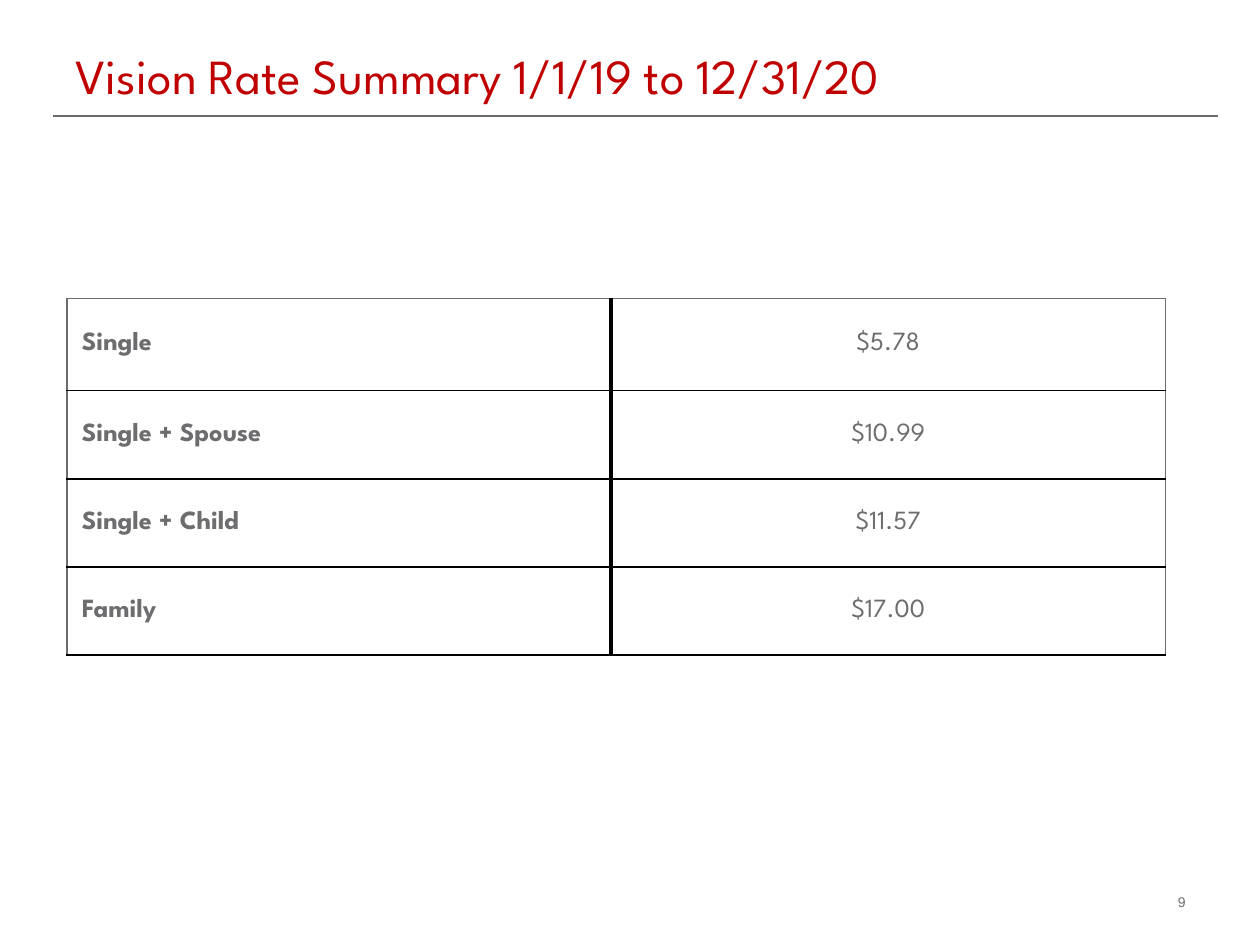
from pptx import Presentation
from pptx.dml.color import RGBColor
from pptx.enum.shapes import MSO_CONNECTOR as Link
from pptx.enum.text import MSO_ANCHOR as Anchor, PP_ALIGN as Align
from pptx.oxml.ns import qn
from pptx.util import Inches, Pt
from lxml.etree import SubElement

# Content
TITLE = "Vision Rate Summary 1/1/19 to 12/31/20"
RATES = [
    ("Single", "$5.78"),
    ("Single + Spouse", "$10.99"),
    ("Single + Child", "$11.57"),
    ("Family", "$17.00"),
]
PAGE = "9"

# Style
FONT = "League Spartan"
RED, GRAY, RULE, BLACK = "C00000", "6D6D70", "6B6B6E", "000000"
WIDTHS = [4.32, 4.4]
HEIGHTS = [0.73, 0.7, 0.7, 0.7]


def color(code):
    return RGBColor.from_string(code)


def style(para, size, code, name=FONT, bold=False):
    for run in para.runs:
        font = run.font
        font.size, font.name, font.bold = Pt(size), name, bold
        font.color.rgb = color(code)


def border(cell, sides):
    props = cell._tc.get_or_add_tcPr()
    for spot, (side, (code, width)) in enumerate(sides.items()):
        line = props.makeelement(qn(f"a:ln{side}"), {"w": str(Pt(width))})
        fill = SubElement(line, qn("a:solidFill"))
        SubElement(fill, qn("a:srgbClr"), val=code)
        props.insert(spot, line)


deck = Presentation()
deck.slide_width, deck.slide_height = Inches(10), Inches(7.5)
slide = deck.slides.add_slide(deck.slide_layouts[5])
shapes = slide.shapes

# Title
title = shapes.title
title.left, title.top = Inches(0.5), Inches(0.3)
title.width, title.height = Inches(9.25), Inches(0.58)
frame = title.text_frame
frame.text = TITLE
frame.vertical_anchor = Anchor.BOTTOM
para = frame.paragraphs[0]
para.alignment, para.line_spacing = Align.LEFT, 1.05
style(para, 28, RED)

# Rule under the title
rule = shapes.add_connector(
    Link.STRAIGHT, Inches(0.42), Inches(0.92), Inches(9.67), Inches(0.92))
rule.line.color.rgb = color(RULE)
rule.line.width = Pt(0.75)
SubElement(rule._element.spPr, qn("a:effectLst"))

# Rate table
table = shapes.add_table(
    len(RATES), len(WIDTHS), Inches(0.53), Inches(2.37),
    Inches(sum(WIDTHS)), Inches(sum(HEIGHTS))).table
table.first_row = table.horz_banding = False
for col, width in zip(table.columns, WIDTHS):
    col.width = Inches(width)
for row, height in zip(table.rows, HEIGHTS):
    row.height = Inches(height)

thin, dark, thick = (GRAY, 1), (BLACK, 1), (BLACK, 2.25)
for r, rate in enumerate(RATES):
    for c, text in enumerate(rate):
        cell = table.cell(r, c)
        cell.text = text
        cell.fill.background()
        cell.vertical_anchor = Anchor.MIDDLE
        cell.margin_left = cell.margin_right = Inches(0.12)
        cell.margin_top = cell.margin_bottom = Inches(0.05)
        para = cell.text_frame.paragraphs[0]
        para.alignment = Align.CENTER if c else Align.LEFT
        style(para, 15, GRAY, bold=c == 0)
        border(cell, {
            "L": thick if c else thin,
            "R": thin if c else thick,
            "T": dark if r else thin,
            "B": dark,
        })

# Page number
box = shapes.add_textbox(Inches(9.25), Inches(7.04), Inches(0.42), Inches(0.27))
box.text_frame.word_wrap = True
box.text_frame.text = PAGE
style(box.text_frame.paragraphs[0], 8, GRAY, "Arial")

deck.save("out.pptx")
